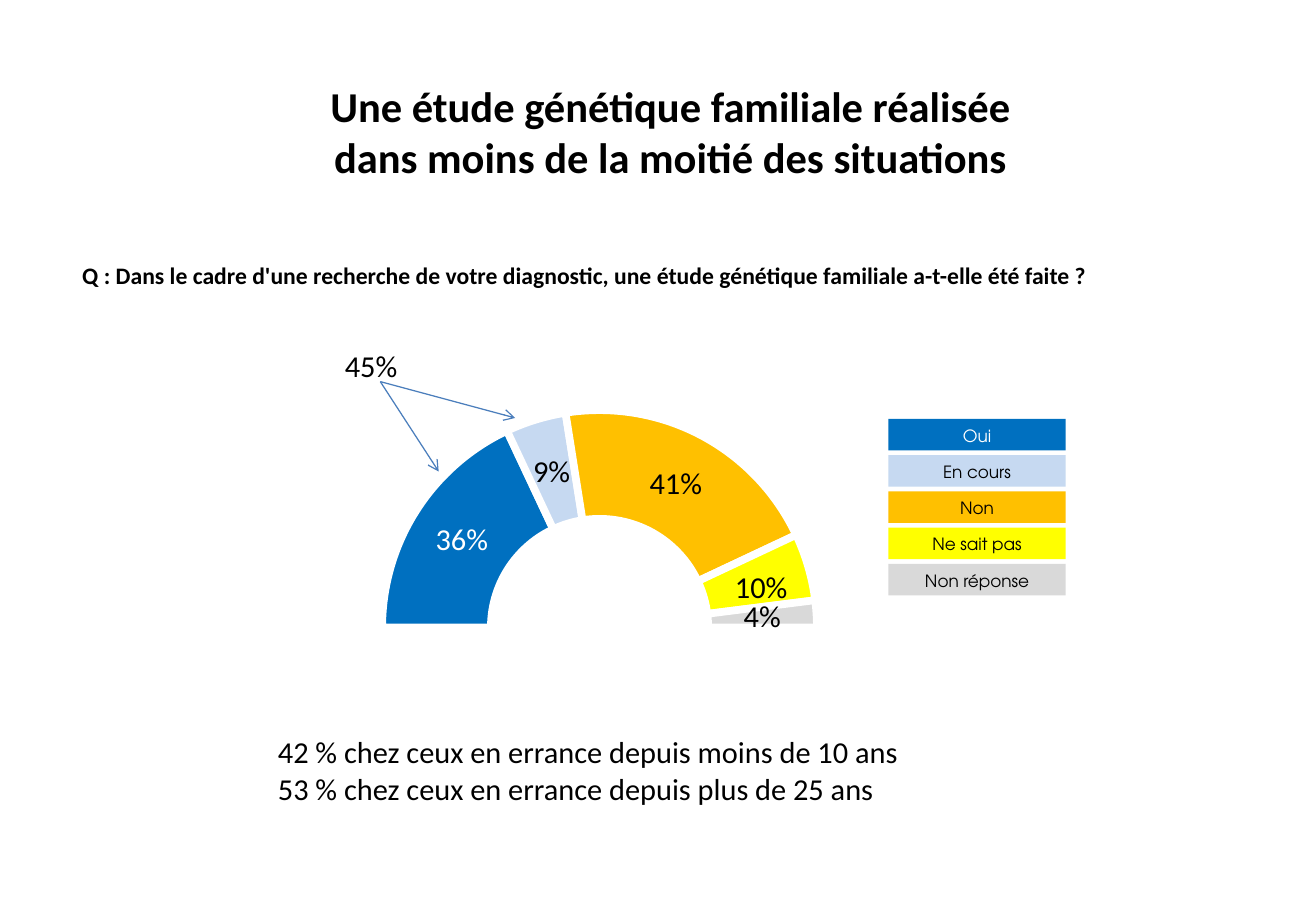
import lxml.etree
import pptx
import pptx.chart.data
import pptx.dml.color
import pptx.enum.chart
import pptx.enum.shapes
import pptx.enum.text
import pptx.oxml
import pptx.oxml.ns
import pptx.util

Cm, Pt = pptx.util.Cm, pptx.util.Pt
RGBColor = pptx.dml.color.RGBColor
PP_ALIGN = pptx.enum.text.PP_ALIGN
MSO_ANCHOR = pptx.enum.text.MSO_ANCHOR
qn = pptx.oxml.ns.qn

BLACK = RGBColor(0x00, 0x00, 0x00)
WHITE = RGBColor(0xFF, 0xFF, 0xFF)
BLUE = RGBColor(0x00, 0x70, 0xC0)
PALE_BLUE = RGBColor(0xC6, 0xD9, 0xF1)
ORANGE = RGBColor(0xFF, 0xC0, 0x00)
YELLOW = RGBColor(0xFF, 0xFF, 0x00)
GREY = RGBColor(0xD9, 0xD9, 0xD9)
ARROW_BLUE = RGBColor(0x4B, 0x7E, 0xBC)

TEXT_FONT = "Calibri"
LEGEND_FONT = "TeX Gyre Adventor"

# Answer, share, fill, text colour
ANSWERS = [
    ("Oui", 0.36, BLUE, WHITE),
    ("En cours", 0.09, PALE_BLUE, BLACK),
    ("Non", 0.41, ORANGE, BLACK),
    ("Ne sait pas", 0.1, YELLOW, BLACK),
    ("Non réponse", 0.04, GREY, BLACK),
]


def set_font(font, size, color, name=TEXT_FONT, bold=False):
    font.name, font.size, font.bold = name, Pt(size), bold
    font.color.rgb = color


def add_text(s, box, text, size, bold=False, align=PP_ALIGN.LEFT,
             anchor=MSO_ANCHOR.TOP):
    tf = s.shapes.add_textbox(*map(Cm, box)).text_frame
    tf.word_wrap = True
    tf.vertical_anchor = anchor
    tf.text = text
    for p in tf.paragraphs:
        p.alignment = align
        for r in p.runs:
            set_font(r.font, size, BLACK, bold=bold)


def manual_layout(target=None, **values):
    """Return a c:layout element with the given fractions of the chart."""
    layout = pptx.oxml.parse_xml(
        "<c:layout %s/>" % pptx.oxml.ns.nsdecls("c"))
    manual = lxml.etree.SubElement(layout, qn("c:manualLayout"))
    if target:
        settings = {"layoutTarget": target, "xMode": "edge", "yMode": "edge"}
        values = {**settings, **values}
    for tag, value in values.items():
        lxml.etree.SubElement(manual, qn("c:" + tag)).set("val", str(value))
    return layout


def add_half_ring(s, box):
    """Draw the shares as a half doughnut; an unfilled point is the other half."""
    shares = [share for _, share, _, _ in ANSWERS]
    data = pptx.chart.data.CategoryChartData(number_format="0%")
    data.categories = [str(i + 1) for i in range(len(shares) + 1)]
    data.add_series("Series 1", shares + [1])
    chart = s.shapes.add_chart(
        pptx.enum.chart.XL_CHART_TYPE.DOUGHNUT, *map(Cm, box), data).chart
    chart.has_legend = chart.has_title = False
    set_font(chart.font, 18, BLACK)

    series = chart.plots[0].series[0]
    labels = series.data_labels
    labels.show_value = True
    labels.number_format, labels.number_format_is_linked = "0%", False
    set_font(labels.font, 18, BLACK)
    for i, (_, _, fill, color) in enumerate(ANSWERS):
        point = series.points[i]
        point.format.fill.solid()
        point.format.fill.fore_color.rgb = fill
        point.format.line.color.rgb = WHITE
        point.format.line.width = Pt(4.5)
        set_font(point.data_label.font, 18, color)
    hidden = series.points[len(ANSWERS)]
    hidden.format.fill.background()
    hidden.format.line.fill.background()
    set_font(hidden.data_label.font, 18, BLACK)

    space = chart._chartSpace
    space.xpath(".//c:firstSliceAng")[0].set("val", "270")
    space.xpath(".//c:holeSize")[0].set("val", "61")
    labelled = space.xpath(".//c:ser/c:dLbls/c:dLbl")
    labelled[-1].xpath("c:showVal")[0].set("val", "0")
    labelled[3].insert(1, manual_layout(x=0.01, y=0.01))
    plot_area = space.xpath(".//c:plotArea")[0]
    for old in plot_area.xpath("c:layout"):
        plot_area.remove(old)
    plot_area.insert(
        0, manual_layout("inner", x=0.06, y=0.09, w=0.84, h=0.79))


def add_legend(s, box):
    left, top, width, height = box
    key_height = 0.66
    pitch = (height - key_height) / (len(ANSWERS) - 1)
    for i, (answer, _, fill, color) in enumerate(ANSWERS):
        sp = s.shapes.add_shape(
            pptx.enum.shapes.MSO_SHAPE.RECTANGLE, Cm(left),
            Cm(top + i * pitch), Cm(width), Cm(key_height))
        sp.shadow.inherit = False
        sp.fill.solid()
        sp.fill.fore_color.rgb = fill
        sp.line.fill.background()
        tf = sp.text_frame
        tf.margin_left = tf.margin_right = Cm(0.1)
        tf.margin_top = tf.margin_bottom = Cm(0.1)
        tf.vertical_anchor = MSO_ANCHOR.MIDDLE
        tf.text = answer
        p = tf.paragraphs[0]
        p.alignment = PP_ALIGN.CENTER
        p.line_spacing = Pt(13)
        set_font(p.runs[0].font, 10, color, LEGEND_FONT)


def add_total(s, box):
    """Write the sum of the first two shares, with an arrow to each."""
    left, top, _, _ = box
    add_text(s, box, "45%", 18)
    start = Cm(left + 0.99), Cm(top + 0.84)
    for dx, dy in ((2.21, 2.72), (3.81, 1.6)):
        line = s.shapes.add_connector(
            pptx.enum.shapes.MSO_CONNECTOR.STRAIGHT, *start,
            Cm(left + dx), Cm(top + dy))
        line.line.color.rgb = ARROW_BLUE
        line.line.width = Pt(0.75)
        ln = line.line._get_or_add_ln()
        lxml.etree.SubElement(ln, qn("a:tailEnd")).set("type", "arrow")
        lxml.etree.SubElement(line._element.spPr, qn("a:effectLst"))


def main():
    prs = pptx.Presentation()
    prs.slide_width, prs.slide_height = Cm(27.51), Cm(19.05)
    s = prs.slides.add_slide(prs.slide_layouts[6])
    add_text(s, (2.16, 1.96, 23.72, 1.57),
             "Une étude génétique familiale réalisée\v"
             "dans moins de la moitié des situations",
             25.2, True, PP_ALIGN.CENTER, MSO_ANCHOR.MIDDLE)
    add_text(s, (1.47, 5.33, 23, 1.19),
             "Q : Dans le cadre d'une recherche de votre diagnostic, "
             "une étude génétique familiale a-t-elle été faite ?", 14, True)
    add_half_ring(s, (7.34, 7.54, 10.82, 11.51))
    add_legend(s, (18.57, 8.76, 3.71, 3.69))
    add_text(s, (5.56, 15.21, 14, 1.8),
             "42 % chez ceux en errance depuis moins de 10 ans\n"
             "53 % chez ceux en errance depuis plus de 25 ans", 18)
    add_total(s, (6.96, 7.14, 2.21, 1.02))
    prs.save("out.pptx")


if __name__ == "__main__":
    main()
